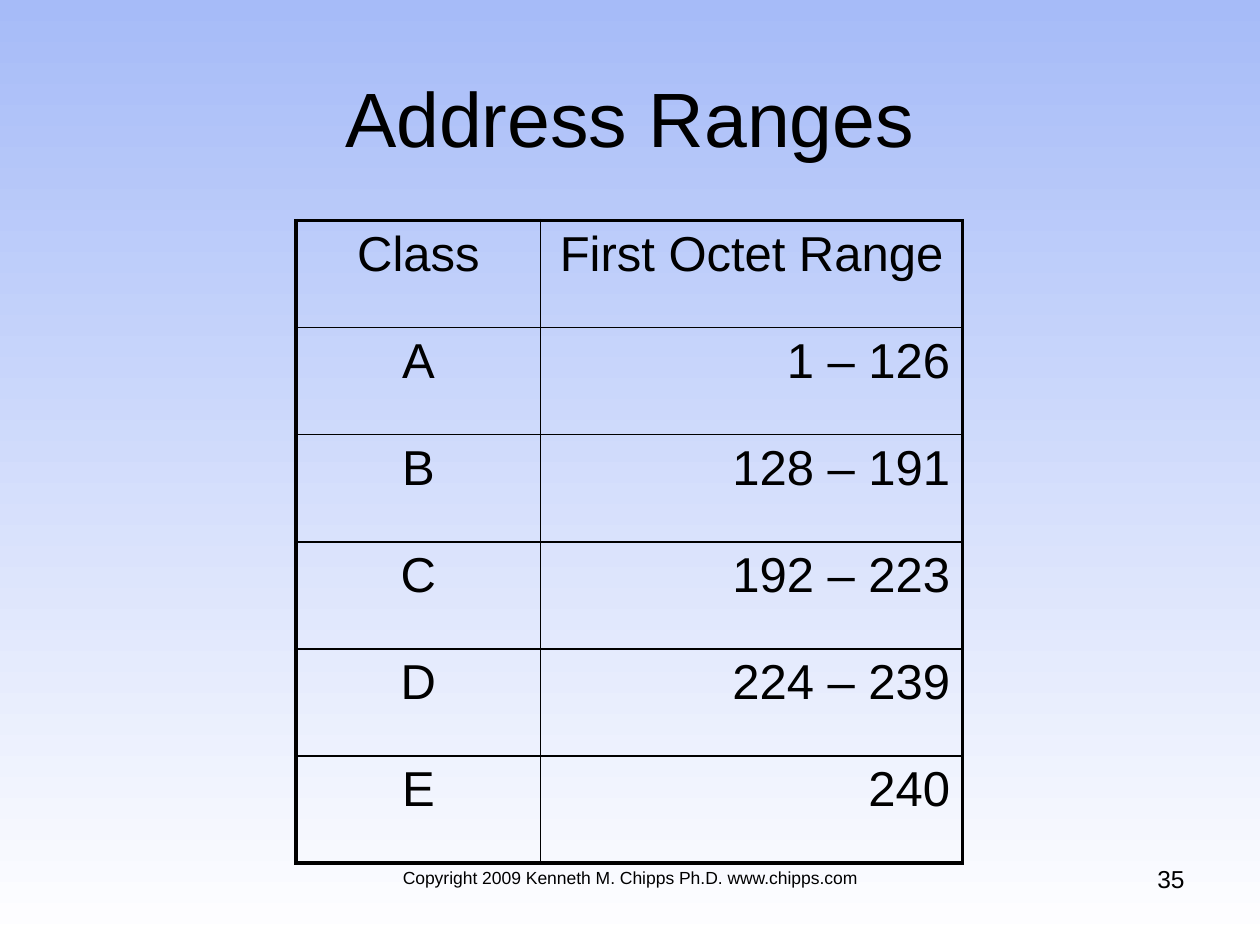
from lxml import etree
from pptx import Presentation
from pptx import util as u
from pptx.dml.color import RGBColor
from pptx.enum import text
from pptx.oxml import ns

BLACK = "000000"
CENTER = text.PP_ALIGN.CENTER
RIGHT = text.PP_ALIGN.RIGHT


def color(value):
    return RGBColor.from_string(value)


def write(tf, content, size=28, align=CENTER, anchor=text.MSO_ANCHOR.TOP,
          font="Arial", ink=BLACK):
    tf.word_wrap = True
    tf.vertical_anchor = anchor
    p = tf.paragraphs[0]
    p.alignment = align
    r = p.add_run()
    r.text = content
    r.font.name = font
    r.font.size = u.Pt(size)
    r.font.bold = False
    r.font.color.rgb = color(ink)


class Deck:
    outer, inner = 2.25, 1

    def __init__(self, width, height):
        self.prs = Presentation()
        self.prs.slide_width = u.Inches(width)
        self.prs.slide_height = u.Inches(height)
        self.s = self.prs.slides.add_slide(self.prs.slide_layouts[6])

    def background(self, top, bottom):
        fill = self.s.background.fill
        fill.gradient()
        fill.gradient_angle = 270
        for stop, value in zip(fill.gradient_stops, (top, bottom)):
            stop.color.rgb = color(value)

    def text(self, content, left, top, width, height, **style):
        sp = self.s.shapes.add_textbox(*map(u.Inches, (left, top, width, height)))
        write(sp.text_frame, content, **style)

    def border(self, cell, side, width):
        tc_pr = cell._tc.get_or_add_tcPr()
        ln = etree.SubElement(tc_pr, ns.qn(f"a:ln{side}"), w=str(u.Pt(width)))
        fill = etree.SubElement(ln, ns.qn("a:solidFill"))
        etree.SubElement(fill, ns.qn("a:srgbClr"), val=BLACK)

    def table(self, rows, left, top, widths, row_height):
        last_row, last_col = len(rows) - 1, len(widths) - 1
        size = (left, top, sum(widths), row_height * len(rows))
        table = self.s.shapes.add_table(
            len(rows), len(widths), *map(u.Inches, size)).table
        table.first_row = table.horz_banding = False
        for column, width in zip(table.columns, widths):
            column.width = u.Inches(width)
        for i, row in enumerate(rows):
            table.rows[i].height = u.Inches(row_height)
            for j, content in enumerate(row):
                cell = table.cell(i, j)
                write(cell.text_frame, content,
                      align=RIGHT if i and j else CENTER)
                edges = {"L": j == 0, "R": j == last_col,
                         "T": i == 0, "B": i == last_row}
                for side, is_outer in edges.items():
                    self.border(cell, side, self.outer if is_outer else self.inner)
                cell.fill.background()


def main():
    deck = Deck(10, 7.5)
    deck.background("A6BBF8", "FFFFFF")
    deck.text("Copyright 2009 Kenneth M. Chipps Ph.D. www.chipps.com",
              3, 6.83, 4, 0.52, size=10)
    deck.text("35", 7.17, 6.81, 2.33, 0.52, size=14, align=RIGHT)
    deck.text("Address Ranges", 0.5, 0.3, 9, 1.25, size=44,
              anchor=text.MSO_ANCHOR.MIDDLE)
    ranges = [
        ("Class", "First Octet Range"),
        ("A", "1 – 126"),
        ("B", "128 – 191"),
        ("C", "192 – 223"),
        ("D", "224 – 239"),
        ("E", "240"),
    ]
    deck.table(ranges, 2.35, 1.75, (1.94, 3.35), 0.85)
    deck.prs.save("out.pptx")


if __name__ == "__main__":
    main()
